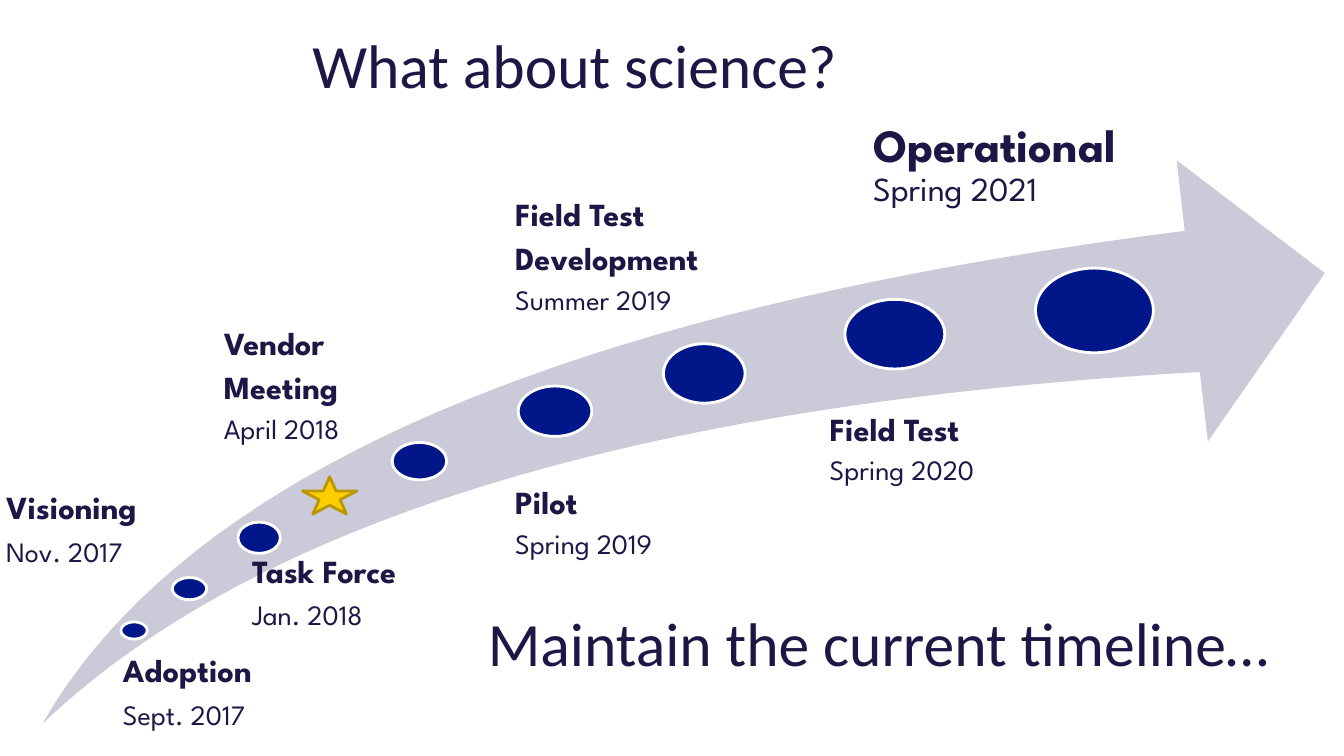
from lxml.etree import SubElement
from pptx import Presentation
from pptx.dml.color import RGBColor
from pptx.enum.shapes import MSO_SHAPE
from pptx.oxml.ns import qn
from pptx.util import Inches, Pt

NAVY = RGBColor(0x1F, 0x16, 0x46)
BLUE = RGBColor(0x00, 0x16, 0x89)
WHITE = RGBColor(0xFF, 0xFF, 0xFF)
LAVENDER = RGBColor(0xCA, 0xCA, 0xD8)
GOLD = RGBColor(0xFF, 0xCE, 0x00)
DARK_GOLD = RGBColor(0xBA, 0x96, 0x00)
CURVE_STEPS = 40


def curve_points(start, control_1, control_2, end):
    """Return points along a cubic Bezier curve, without its start."""
    points = []
    for step in range(1, CURVE_STEPS + 1):
        t = step / CURVE_STEPS
        weights = ((1 - t) ** 3, 3 * t * (1 - t) ** 2, 3 * t**2 * (1 - t), t**3)
        corners = (start, control_1, control_2, end)
        points.append(tuple(
            Inches(sum(w * corner[axis] for w, corner in zip(weights, corners)))
            for axis in (0, 1)
        ))
    return points


def add_text(page, left, top, width, height, lines, inset=0.1, margin=0.0):
    """Add a text box; lines holds (text, font, size, bold, spacing, before)."""
    box = page.shapes.add_textbox(Inches(left), Inches(top), Inches(width), Inches(height))
    frame = box.text_frame
    frame.word_wrap = True
    frame.margin_left = Inches(inset)
    frame.margin_top = frame.margin_right = frame.margin_bottom = Inches(margin)
    for index, (text, font, size, bold, spacing, before) in enumerate(lines):
        para = frame.add_paragraph() if index else frame.paragraphs[0]
        para.text = text
        para.line_spacing = spacing
        para.space_before = Pt(before)
        para.font.name = font
        para.font.size = Pt(size)
        para.font.bold = bold
        para.font.color.rgb = NAVY


deck = Presentation()
deck.slide_width = Inches(13.33)
deck.slide_height = Inches(7.5)
page = deck.slides.add_slide(deck.slide_layouts[6])

# Curved arrow
tail = (0.42, 7.18)
upper_edge = curve_points(tail, (1.84, 4.7), (5.61, 3.07), (11.75, 2.29))
head = [(Inches(x), Inches(y))
        for x, y in ((11.67, 1.59), (13.14, 2.71), (11.98, 4.38), (11.9, 3.69))]
lower_edge = curve_points((11.9, 3.69), (6.37, 4), (2.54, 5.16), tail)
builder = page.shapes.build_freeform(Inches(tail[0]), Inches(tail[1]))
builder.add_line_segments(upper_edge + head + lower_edge, close=True)
arrow = builder.convert_to_shape()
arrow.shadow.inherit = False
arrow.fill.solid()
arrow.fill.fore_color.rgb = LAVENDER
arrow.line.fill.background()

# Milestones along the arrow, growing towards its head
dots = [
    (1.2, 6.17, 0.26, 0.17),
    (1.71, 5.73, 0.34, 0.22),
    (2.36, 5.18, 0.42, 0.31),
    (3.89, 4.39, 0.54, 0.37),
    (5.14, 3.83, 0.73, 0.5),
    (6.58, 3.41, 0.81, 0.59),
    (8.38, 2.97, 0.99, 0.69),
    (10.27, 2.66, 1.17, 0.84),
]
markers = [(MSO_SHAPE.OVAL, dot, BLUE, WHITE) for dot in dots]
markers.append((MSO_SHAPE.STAR_5_POINT, (3, 4.73, 0.54, 0.37), GOLD, DARK_GOLD))
for kind, place, fill, outline in markers:
    marker = page.shapes.add_shape(kind, *(Inches(length) for length in place))
    marker.shadow.inherit = False
    marker.fill.solid()
    marker.fill.fore_color.rgb = fill
    marker.line.color.rgb = outline
    marker.line.width = Pt(2)

# Milestone labels: place, name, date, line spacing, space before the date
labels = [
    ((1.05, 6.5, 2.4, 0.94), "Adoption", "Sept. 2017", 0.9, 8.1),
    ((-0.11, 4.88, 2.16, 1.21), "Visioning", "Nov. 2017", 0.9, 8.1),
    ((2.33, 5.51, 2.61, 1.21), "Task Force", "Jan. 2018", 0.9, 8.1),
    ((2.05, 3.15, 2.16, 1.21), "Vendor Meeting", "April 2018", 1.15, 0),
    ((4.94, 4.73, 2.4, 1.21), "Pilot", "Spring 2019", 1.15, 0),
    ((4.94, 1.87, 2.96, 1.21), "Field Test Development", "Summer 2019", 1.15, 0),
    ((8.06, 4, 2.4, 0.94), "Field Test", "Spring 2020", 1.15, 0),
]
for place, name, date, spacing, before in labels:
    add_text(page, *place, [
        (name, "League Spartan", 23, True, spacing, 0),
        (date, "League Spartan", 20, False, spacing, before),
    ], inset=0.17)
add_text(page, 8.38, 1.22, 3.01, 1.61, [
    ("Operational", "League Spartan", 33, True, 0.9, 0),
    ("Spring 2021", "League Spartan", 24, False, 0.9, 0),
], inset=0.28)

# Headings
for left, top, heading in ((3, 0.3, "What about science?"),
                           (4.74, 6.04, "Maintain the current timeline…")):
    add_text(page, left, top, 9.4, 0.53,
             [(heading, "Calibri", 44, False, 0.9, 0)], margin=0.05)

deck.save("out.pptx")
